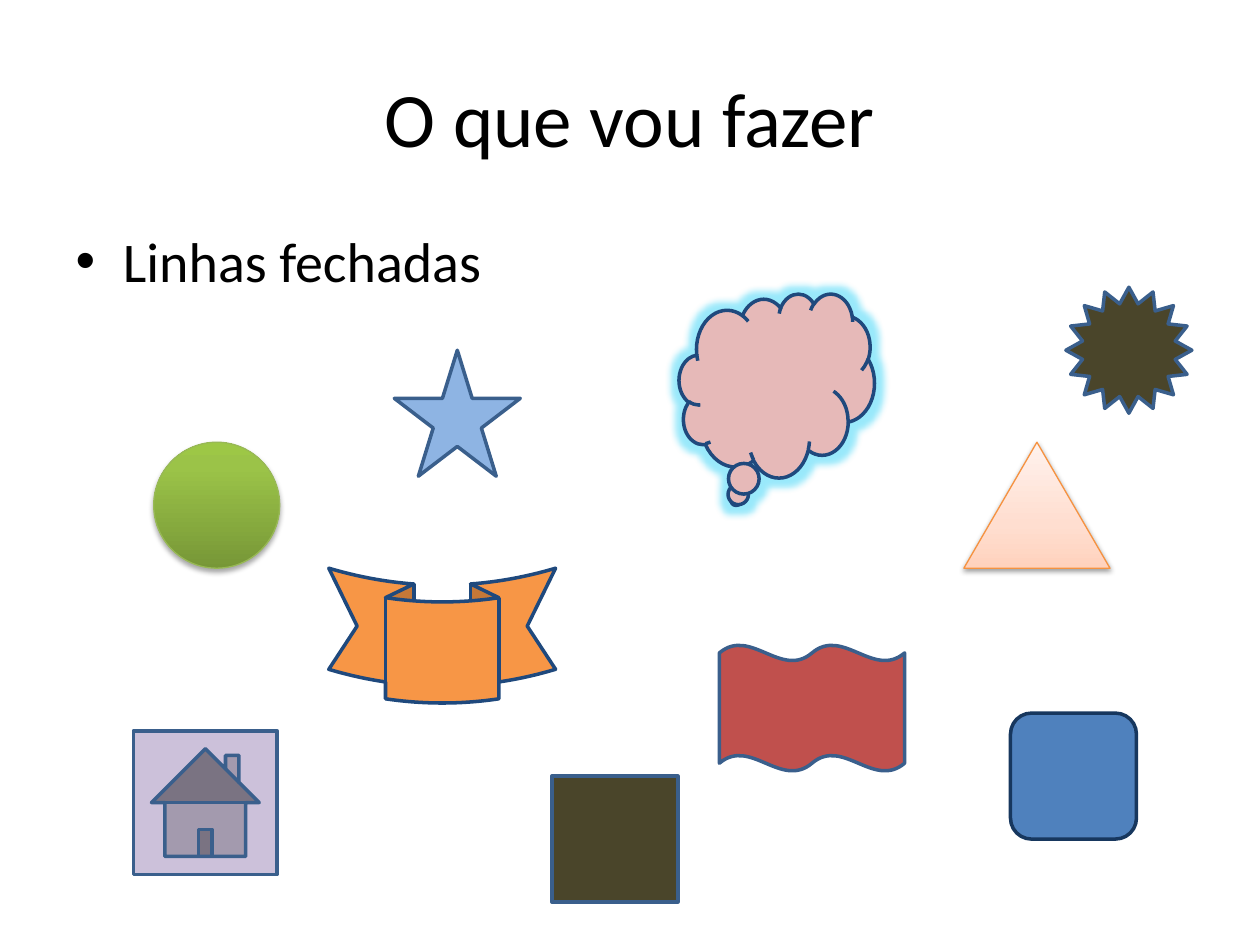
from lxml.etree import SubElement
from pptx import Presentation
from pptx.dml.color import RGBColor
from pptx.enum.shapes import MSO_SHAPE as Kind
from pptx.enum.text import MSO_ANCHOR, PP_ALIGN
from pptx.oxml.ns import qn
from pptx.util import Emu, Pt

SCALE = 9144
BLACK = RGBColor(0x00, 0x00, 0x00)
NAVY = RGBColor(0x1F, 0x49, 0x7D)
DEEP = RGBColor(0x17, 0x37, 0x5E)
STEEL = RGBColor(0x3A, 0x5F, 0x8C)
BLUE = RGBColor(0x4F, 0x81, 0xBD)
SKY = RGBColor(0x8E, 0xB4, 0xE3)
CYAN = RGBColor(0x00, 0xC8, 0xF5)
OLIVE = RGBColor(0x4A, 0x45, 0x2A)
LILAC = RGBColor(0xCC, 0xC1, 0xDA)
ROSE = RGBColor(0xE6, 0xB9, 0xB8)
RED = RGBColor(0xC0, 0x50, 0x4D)
ORANGE = RGBColor(0xF7, 0x96, 0x46)
AMBER = RGBColor(0xF6, 0x92, 0x40)
LEAF = RGBColor(0x98, 0xB9, 0x55)
GREENS = [(0, RGBColor(0x77, 0x97, 0x37)), (80, RGBColor(0x9B, 0xC3, 0x48)),
          (100, RGBColor(0x9D, 0xC7, 0x46))]
PEACHES = [(0, RGBColor(0xFF, 0xD2, 0xBD)), (35, RGBColor(0xFF, 0xDE, 0xD0)),
           (100, RGBColor(0xFF, 0xF2, 0xED))]


def px(num):
    return Emu(num * SCALE)


def place(item, box):
    item.left, item.top, item.width, item.height = map(px, box)


def write(item, text, size, align=PP_ALIGN.LEFT, anchor=MSO_ANCHOR.TOP):
    frame = item.text_frame
    frame.word_wrap = True
    frame.vertical_anchor = anchor
    para = frame.paragraphs[0]
    para.alignment = align
    run = para.add_run()
    run.text = text
    run.font.size = Pt(size)
    run.font.name = "Calibri"
    run.font.color.rgb = BLACK


def tint(node, color, alpha=None):
    part = SubElement(node, qn("a:srgbClr"), val=str(color))
    if alpha:
        SubElement(part, qn("a:alpha"), val=str(alpha * 1000))


def blend(shape, stops):
    shape.fill.gradient()
    shape.fill.gradient_angle = 90
    rows = shape.element.spPr.find(qn("a:gradFill")).find(qn("a:gsLst"))
    for old in list(rows):
        rows.remove(old)
    for pos, color in stops:
        tint(SubElement(rows, qn("a:gs"), pos=str(pos * 1000)), color)


def effect(shape, name, color, alpha, **sizes):
    group = shape.element.spPr.find(qn("a:effectLst"))
    tint(SubElement(group, qn(name), {key: str(val) for key, val in sizes.items()}),
         color, alpha)


def cast(shape, alpha, dist):
    effect(shape, "a:outerShdw", BLACK, alpha, blurRad=Pt(3.1), dist=Pt(dist),
           dir=5400000, rotWithShape=0)


def draw(slide, kind, box, fill, line=STEEL, width=2):
    shape = slide.shapes.add_shape(kind, *map(px, box))
    shape.shadow.inherit = False
    if isinstance(fill, list):
        blend(shape, fill)
    else:
        shape.fill.solid()
        shape.fill.fore_color.rgb = fill
    shape.line.color.rgb = line
    shape.line.width = Pt(width)
    return shape


def head(slide, box):
    title = slide.shapes.title
    place(title, box)
    write(title, "O que vou fazer", 44, align=PP_ALIGN.CENTER, anchor=MSO_ANCHOR.MIDDLE)


def body(slide, box):
    item = slide.placeholders[1]
    place(item, box)
    write(item, "Linhas fechadas", 32)


def forms(slide, box):
    left, top = box[:2]

    def put(kind, x, y, fill, wide=100, high=100, **style):
        return draw(slide, kind, (left + x, top + y, wide, high), fill, **style)

    ball = put(Kind.OVAL, 72, 176, GREENS, line=LEAF, width=0.75)
    cast(ball, 35, 1.8)
    put(Kind.STAR_5_POINT, 263, 103, SKY)
    peak = put(Kind.ISOSCELES_TRIANGLE, 715, 176, PEACHES, wide=116, line=AMBER, width=0.75)
    cast(peak, 38, 1.6)
    put(Kind.RECTANGLE, 388, 441, OLIVE)
    put(Kind.ROUNDED_RECTANGLE, 752, 391, BLUE, line=DEEP)
    put(Kind.ACTION_BUTTON_HOME, 56, 405, LILAC, wide=114, high=114)
    cloud = put(Kind.CLOUD_CALLOUT, 489, 58, ROSE, wide=155, high=146, line=NAVY)
    effect(cloud, "a:glow", CYAN, 40, rad=Pt(8))
    put(Kind.DOUBLE_WAVE, 521, 337, RED, wide=147)
    put(Kind.CURVED_DOWN_RIBBON, 211, 276, ORANGE, wide=180, high=107, line=NAVY)
    put(Kind.STAR_16_POINT, 796, 53, OLIVE)


def main():
    deck = Presentation()
    deck.slide_width, deck.slide_height = px(1000), px(750)
    slide = deck.slides.add_slide(deck.slide_layouts[1])
    area = (50, 175, 900, 495)
    head(slide, (50, 30, 900, 125))
    body(slide, area)
    forms(slide, area)
    deck.save("out.pptx")


if __name__ == "__main__":
    main()
